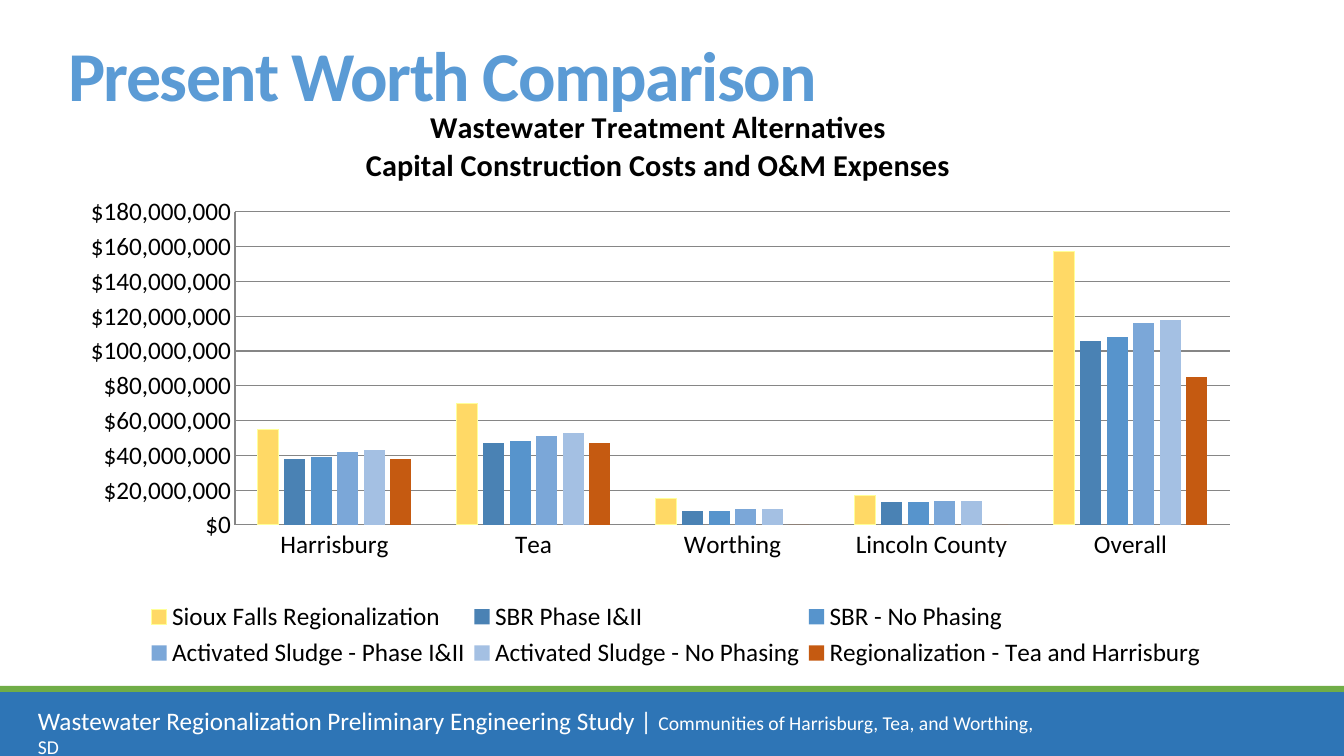
"""Build the present worth comparison slide with its clustered column chart."""
from pptx import Presentation
from pptx.chart.data import CategoryChartData
from pptx.dml.color import RGBColor
from pptx.enum.chart import XL_CHART_TYPE, XL_LEGEND_POSITION, XL_TICK_MARK
from pptx.enum.shapes import MSO_SHAPE
from pptx.enum.text import MSO_ANCHOR, PP_ALIGN
from pptx.oxml import parse_xml
from pptx.oxml.ns import nsdecls
from pptx.util import Pt

SCALE = 12192000 / 1344
FONT = "Calibri"
CHART_LEFT, CHART_TOP, CHART_WIDTH, CHART_HEIGHT = 59, 88, 1186, 610
COLORS = {
    "band": "2E75B6", "stripe": "70AD47", "title": "5B9BD5", "white": "FFFFFF",
    "black": "000000", "grid": "868686", "yellow": "FFD966", "yellow line": "FFFF99",
    "dark blue": "4A82B4", "blue": "5794CC", "light blue": "7BA7D8",
    "pale blue": "A4C0E3", "orange": "C55A11",
}


def px(*lengths):
    return [round(length * SCALE) for length in lengths]


def add_text(paragraph, text, size, color, bold=False, spacing=None):
    run = paragraph.add_run()
    run.text = text
    run.font.name = FONT
    run.font.size = Pt(size)
    run.font.bold = bold
    run.font.color.rgb = RGBColor.from_string(COLORS[color])
    if spacing is not None:
        run.font._element.set("spc", str(spacing))


presentation = Presentation()
presentation.slide_width, presentation.slide_height = px(1344, 756)
slide = presentation.slides.add_slide(presentation.slide_layouts[5])

for color, top, height in [("band", 690, 66), ("stripe", 686, 6)]:
    bar = slide.shapes.add_shape(MSO_SHAPE.RECTANGLE, *px(0, top, 1344, height))
    bar.shadow.inherit = False
    bar.fill.solid()
    bar.fill.fore_color.rgb = RGBColor.from_string(COLORS[color])
    bar.line.fill.background()

footer = slide.shapes.add_textbox(*px(28, 700, 1037, 40))
footer.text_frame.word_wrap = True
footer_paragraph = footer.text_frame.paragraphs[0]
add_text(footer_paragraph, "Wastewater Regionalization Preliminary Engineering Study | ", 18, "white")
add_text(footer_paragraph, "Communities of Harrisburg, Tea, and Worthing, SD", 14, "white")

title = slide.shapes.title
title.left, title.top, title.width, title.height = px(58, 35, 1187, 90)
title.text_frame.vertical_anchor = MSO_ANCHOR.MIDDLE
title_paragraph = title.text_frame.paragraphs[0]
title_paragraph.alignment = PP_ALIGN.LEFT
title_paragraph.line_spacing = 0.85
add_text(title_paragraph, "Present Worth Comparison", 50, "title", bold=True, spacing=-120)

costs_in_millions = [
    ("Sioux Falls Regionalization", "yellow", (55, 70, 15, 17, 157)),
    ("SBR Phase I&II", "dark blue", (38, 47, 8, 13, 106)),
    ("SBR - No Phasing", "blue", (39, 48, 8, 13, 108)),
    ("Activated Sludge - Phase I&II", "light blue", (42, 51, 9, 14, 116)),
    ("Activated Sludge - No Phasing", "pale blue", (43, 53, 9, 14, 118)),
    ("Regionalization - Tea and Harrisburg", "orange", (38, 47, 0, 0, 85)),
]
chart_data = CategoryChartData(number_format='"$"#,##0')
chart_data.categories = ["Harrisburg", "Tea", "Worthing", "Lincoln County", "Overall"]
for name, color, millions in costs_in_millions:
    chart_data.add_series(name, [value * 1000000 for value in millions])

chart = slide.shapes.add_chart(
    XL_CHART_TYPE.COLUMN_CLUSTERED,
    *px(CHART_LEFT, CHART_TOP, CHART_WIDTH, CHART_HEIGHT), chart_data).chart
chart.font.name = FONT
chart.font.size = Pt(18)
chart.font.color.rgb = RGBColor.from_string(COLORS["black"])

chart.has_title = True
chart_title = chart.chart_title.text_frame
heading_lines = ["Wastewater Treatment Alternatives", "Capital Construction Costs and O&M Expenses"]
for index, line in enumerate(heading_lines):
    paragraph = chart_title.add_paragraph() if index else chart_title.paragraphs[0]
    add_text(paragraph, line, 21.6, "black", bold=True)

chart.has_legend = True
chart.legend.position = XL_LEGEND_POSITION.BOTTOM
chart.legend.include_in_layout = False

value_axis = chart.value_axis
value_axis.minimum_scale = 0
value_axis.maximum_scale = 180000000
value_axis.major_unit = 20000000
value_axis.has_major_gridlines = True
value_axis.tick_labels.number_format = '"$"#,##0'
value_axis.tick_labels.number_format_is_linked = False
for axis in (value_axis, chart.category_axis):
    axis.major_tick_mark = XL_TICK_MARK.NONE
    axis.minor_tick_mark = XL_TICK_MARK.NONE
for line_format in (value_axis.format.line, chart.category_axis.format.line,
                    value_axis.major_gridlines.format.line):
    line_format.color.rgb = RGBColor.from_string(COLORS["grid"])
    line_format.width = Pt(0.75)

plot = chart.plots[0]
plot.gap_width = 219
plot.overlap = -27
plot.vary_by_categories = False
for series, (name, color, millions) in zip(plot.series, costs_in_millions):
    series.invert_if_negative = False
    series.format.fill.solid()
    series.format.fill.fore_color.rgb = RGBColor.from_string(COLORS[color])
yellow_outline = plot.series[0].format.line
yellow_outline.color.rgb = RGBColor.from_string(COLORS["yellow line"])
yellow_outline.width = Pt(0.75)

chart_element = chart._chartSpace.chart
layouts = [
    (chart_element.plotArea, 0, '<c:layoutTarget val="inner"/>', (235, 212), (995, 313)),
    (chart_element.find("{*}title"), 1, "", (363, 104), None),
    (chart_element.find("{*}legend"), 1, "", (142, 596), (1068, 78)),
]
for element, position, target, (left, top), size in layouts:
    for old_layout in element.findall("{*}layout"):
        element.remove(old_layout)
    fractions = {"x": (left - CHART_LEFT) / CHART_WIDTH, "y": (top - CHART_TOP) / CHART_HEIGHT}
    if size:
        fractions.update(w=size[0] / CHART_WIDTH, h=size[1] / CHART_HEIGHT)
    values = "".join(f'<c:{key} val="{value:.4f}"/>' for key, value in fractions.items())
    element.insert(position, parse_xml(
        f'<c:layout {nsdecls("c")}><c:manualLayout>{target}<c:xMode val="edge"/>'
        f'<c:yMode val="edge"/>{values}</c:manualLayout></c:layout>'))

presentation.save("out.pptx")
